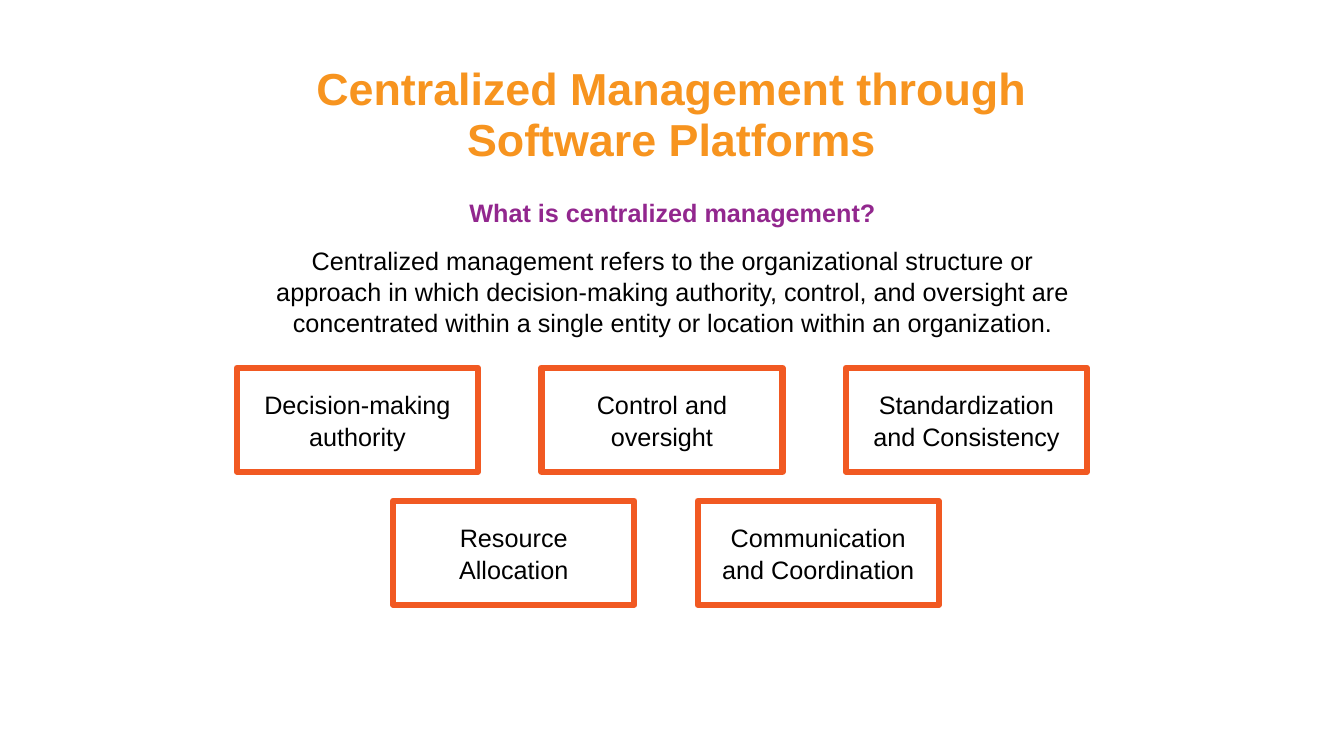
from pptx import Presentation
from pptx.dml.color import RGBColor
from pptx.enum.shapes import MSO_SHAPE
from pptx.enum.text import MSO_ANCHOR, PP_ALIGN
from pptx.util import Inches, Pt

RECTANGLE = MSO_SHAPE.RECTANGLE
CENTER = PP_ALIGN.CENTER
TOP, MIDDLE = MSO_ANCHOR.TOP, MSO_ANCHOR.MIDDLE

ORANGE, PURPLE, BLACK, BORDER = "F7941F", "92278E", "000000", "F15922"

TITLE = "Centralized Management through Software Platforms"
QUESTION = "What is centralized management?"
ANSWER = (
    "Centralized management refers to the organizational structure or approach "
    "in which decision-making authority, control, and oversight are concentrated "
    "within a single entity or location within an organization."
)
# Left edge and top of each row, then its aspects
ASPECT_ROWS = [
    (2.35, 3.65, ["Decision-making authority", "Control and oversight",
                  "Standardization and Consistency"]),
    (3.9, 4.97, ["Resource Allocation", "Communication and Coordination"]),
]
ASPECT_WIDTH, ASPECT_HEIGHT, ASPECT_PITCH = 2.39, 1.03, 3.02


def color(hex_code):
    return RGBColor.from_string(hex_code)


def write(paragraph, text, size, hex_code, bold=False, spacing=1.0):
    paragraph.text = text
    paragraph.alignment = CENTER
    paragraph.line_spacing = spacing
    font = paragraph.font
    font.name, font.size, font.bold = "Arial", Pt(size), bold
    font.color.rgb = color(hex_code)


def add_text_frame(slide, left, top, width, height, anchor):
    frame = slide.shapes.add_textbox(
        Inches(left), Inches(top), Inches(width), Inches(height)).text_frame
    frame.word_wrap = True
    frame.vertical_anchor = anchor
    return frame


def add_title(slide, left, top, width, height):
    frame = add_text_frame(slide, left, top, width, height, MIDDLE)
    write(frame.paragraphs[0], TITLE, 32, ORANGE, bold=True, spacing=0.95)


def add_definition(slide, left, top, width, height):
    frame = add_text_frame(slide, left, top, width, height, TOP)
    write(frame.paragraphs[0], QUESTION, 18, PURPLE, bold=True, spacing=1.03)
    answer = frame.add_paragraph()
    write(answer, ANSWER, 18, BLACK, spacing=1.03)
    answer.space_before = Pt(12)


def add_aspect_row(slide, left, top, aspects):
    for column, aspect in enumerate(aspects):
        box = slide.shapes.add_shape(
            RECTANGLE, Inches(left + column * ASPECT_PITCH), Inches(top),
            Inches(ASPECT_WIDTH), Inches(ASPECT_HEIGHT))
        box.shadow.inherit = False
        box.fill.background()
        box.line.color.rgb = color(BORDER)
        box.line.width = Pt(4.5)
        frame = box.text_frame
        frame.word_wrap = True
        frame.vertical_anchor = MIDDLE
        write(frame.paragraphs[0], aspect, 18, BLACK, spacing=1.06)


def main():
    deck = Presentation()
    deck.slide_width, deck.slide_height = Inches(13.33), Inches(7.5)
    slide = deck.slides.add_slide(deck.slide_layouts[6])

    # Heading and definition
    add_title(slide, 2.35, 0.4, 8.62, 1.5)
    add_definition(slide, 2.53, 1.9, 8.28, 1.7)

    # Aspects of centralized management
    for left, top, aspects in ASPECT_ROWS:
        add_aspect_row(slide, left, top, aspects)

    deck.save("out.pptx")


if __name__ == "__main__":
    main()
